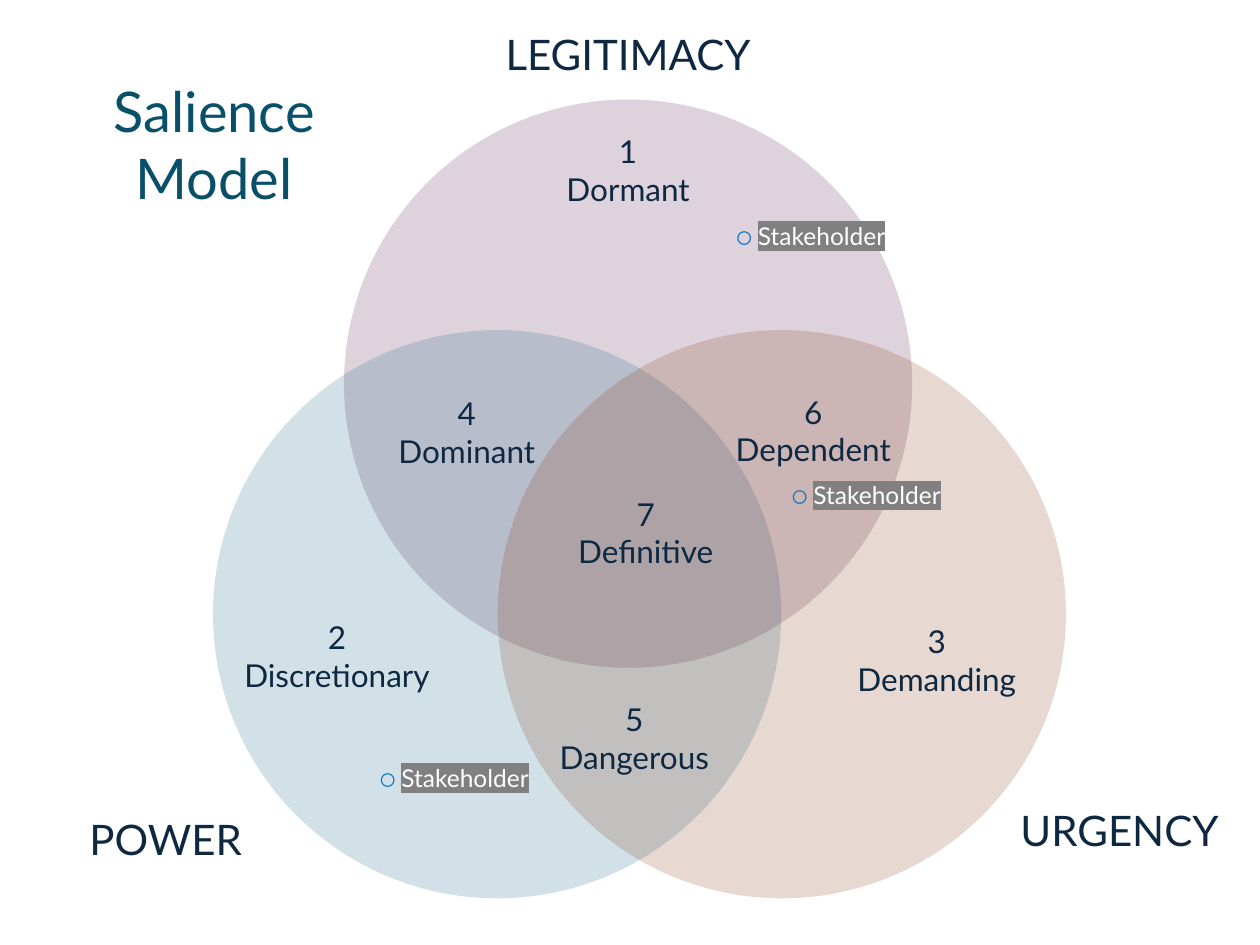
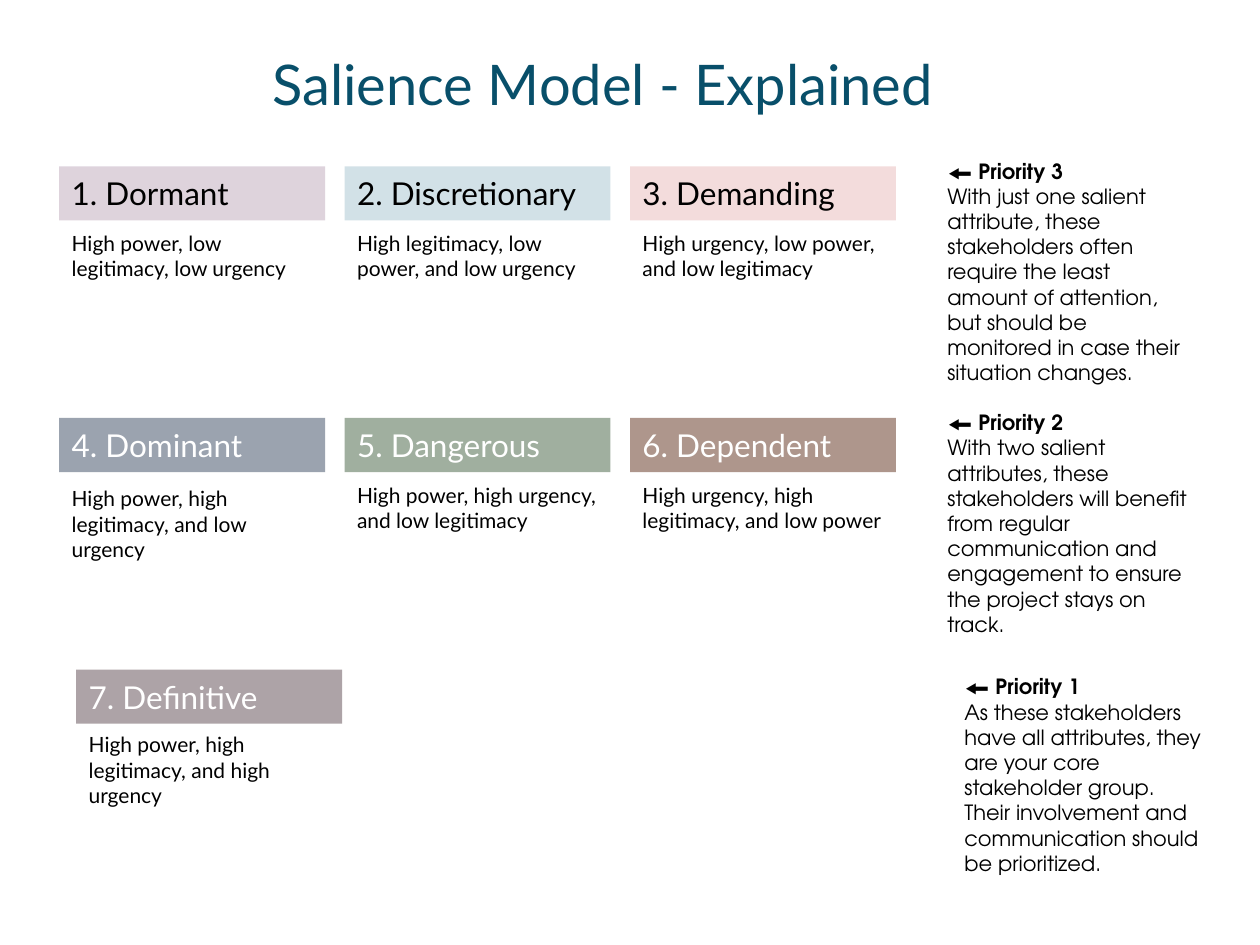
from lxml import etree
from pptx import Presentation
from pptx.dml.color import RGBColor
from pptx.enum.shapes import MSO_SHAPE as Shape
from pptx.enum.text import MSO_ANCHOR as Anchor, MSO_AUTO_SIZE as AutoSize, PP_ALIGN as Align
from pptx.oxml.ns import qn
from pptx.util import Inches, Pt

# Colours
WHITE = RGBColor(0xFF, 0xFF, 0xFF)
BLACK = RGBColor(0x00, 0x00, 0x00)
NAVY = RGBColor(0x0E, 0x28, 0x41)
TEAL = RGBColor(0x08, 0x4F, 0x6A)
MARKER_BLUE = RGBColor(0x00, 0x70, 0xC0)
GREY = RGBColor(0x80, 0x80, 0x80)
PLUM = RGBColor(0x50, 0x16, 0x4A)
OCEAN = RGBColor(0x15, 0x60, 0x82)
RUST = RGBColor(0x80, 0x35, 0x0E)
RED = RGBColor(0xC1, 0x47, 0x47)
SLATE = RGBColor(0x9B, 0xA3, 0xAF)
SAGE = RGBColor(0xA0, 0xAF, 0x9F)
CLAY = RGBColor(0xAE, 0x96, 0x8C)
MAUVE = RGBColor(0xAD, 0xA3, 0xA7)

# Grid: 100 columns by 75 rows of square cells
WIDTH, HEIGHT = Inches(10), Inches(7.5)
CELL = WIDTH / 100
TINT = 19  # opacity of see-through fills, in percent

# Text styles
TITLE = dict(name="Lato", size=Pt(32), color=TEAL)
ATTRIBUTE = dict(name="Lato", size=Pt(24), color=NAVY)
REGION = dict(name="Lato", size=Pt(18), color=NAVY)
MARKER = dict(name="Lato", size=Pt(14), color=MARKER_BLUE)
STAKEHOLDER = {**MARKER, "color": WHITE, "highlight": GREY}
HEADING = dict(name="Lato", size=Pt(18), color=BLACK)
DETAIL = dict(name="Lato", size=Pt(12), color=BLACK)
ADVICE = dict(name="TeX Gyre Adventor", size=Pt(12), color=BLACK, bold=False)
PRIORITY = {**ADVICE, "bold": True}


class Painter:
    """Holds the deck and the current slide; places elements in grid cells."""

    def __init__(self):
        self.deck = Presentation()
        self.deck.slide_width, self.deck.slide_height = WIDTH, HEIGHT
        self.page = None

    def new_page(self, title, *cells):
        self.page = self.deck.slides.add_slide(self.deck.slide_layouts[5])
        box = self.page.shapes.title
        for side, value in zip(("left", "top", "width", "height"), self.place(*cells)):
            setattr(box, side, value)
        self.set_lines(box, [[(title, TITLE)]], Align.CENTER)

    def place(self, *cells):
        return [round(cell * CELL) for cell in cells]

    def set_lines(self, box, lines, align=Align.LEFT):
        """Each line is a list of (text, style) pairs."""
        frame = box.text_frame
        settings = dict(word_wrap=True, auto_size=AutoSize.NONE, vertical_anchor=Anchor.MIDDLE)
        for key, value in settings.items():
            setattr(frame, key, value)
        for index, line in enumerate(lines):
            para = frame.add_paragraph() if index else frame.paragraphs[0]
            para.alignment = align
            for text, style in line:
                span = para.add_run()
                span.text = text
                self.style_font(span.font, style)

    def style_font(self, font, style):
        for key, value in style.items():
            if key == "color":
                font.color.rgb = value
            elif key != "highlight":
                setattr(font, key, value)
        if "highlight" in style:
            mark = etree.Element(qn("a:highlight"))
            etree.SubElement(mark, qn("a:srgbClr"), val=str(style["highlight"]))
            font._element.find(qn("a:solidFill")).addnext(mark)

    def text(self, cells, lines, align=Align.LEFT):
        self.set_lines(self.page.shapes.add_textbox(*self.place(*cells)), lines, align)

    def shape(self, kind, cells, color, opacity=100):
        box = self.page.shapes.add_shape(kind, *self.place(*cells))
        box.shadow.inherit = False
        box.line.fill.background()
        box.fill.solid()
        box.fill.fore_color.rgb = color
        if opacity < 100:
            tone = box._element.spPr.find(".//" + qn("a:srgbClr"))
            etree.SubElement(tone, qn("a:alpha"), val=str(opacity * 1000))
        return box


def venn_page(painter):
    painter.new_page("Salience Model", 1.4, 4.8, 31.2, 13.2)

    # Three overlapping circles
    diameter = 45.1
    for left, top, color in [(27.3, 7.9, PLUM), (16.9, 26.2, OCEAN), (39.5, 26.2, RUST)]:
        painter.shape(Shape.OVAL, (left, top, diameter, diameter), color, TINT)

    # Numbered regions and the attribute of each circle
    label_size = (21.7, 9.5)
    regions = [
        ("Dormant", 39, 8.7), ("Discretionary", 15.9, 47.3), ("Demanding", 63.5, 47.6),
        ("Dominant", 26.2, 29.5), ("Dangerous", 39.5, 53.8), ("Dependent", 53.7, 29.4),
        ("Definitive", 40.4, 37.5),
    ]
    for number, (name, left, top) in enumerate(regions, 1):
        lines = [[(str(number), REGION)], [(name, REGION)]]
        painter.text((left, top, *label_size), lines, Align.CENTER)
    for name, left, top in [("POWER", 2.3, 61.8), ("LEGITIMACY", 39, -0.5), ("URGENCY", 78, 61.1)]:
        painter.text((left, top, *label_size), [[(name, ATTRIBUTE)]], Align.CENTER)

    # Stakeholder markers
    for left, top in [(57.5, 15.9), (61.9, 36.5), (29.2, 58.9)]:
        painter.text((left, top, 20.8, 5.6), [[("⚪ ", MARKER), ("Stakeholder", STAKEHOLDER)]])


def explained_page(painter):
    painter.new_page("Salience Model - Explained", 9.4, 0, 76.9, 13.2)
    first_left, first_top, column_step, row_step = 4.7, 13.2, 22.65, 19.97
    width, band_height, advice_left = 21.1, 4.3, 74.2

    # Each row: indent, heading colour, opacity, advice, classes (name, fill, detail, height)
    rows = [
        (0, BLACK, TINT,
         "With just one salient attribute, these stakeholders often require the least amount of "
         "attention, but should be monitored in case their situation changes.",
         [("Dormant", PLUM, "High power, low legitimacy, low urgency", 5.6),
          ("Discretionary", OCEAN, "High legitimacy, low power, and low urgency", 5.6),
          ("Demanding", RED, "High urgency, low power, and low legitimacy", 5.6)]),
        (0, WHITE, 100,
         "With two salient attributes, these stakeholders will benefit from regular "
         "communication and engagement to ensure the project stays on track.",
         [("Dominant", SLATE, "High power, high legitimacy, and low urgency", 8.2),
          ("Dangerous", SAGE, "High power, high urgency, and low legitimacy", 5.6),
          ("Dependent", CLAY, "High urgency, high legitimacy, and low power", 5.6)]),
        (1.35, WHITE, 100,
         "As these stakeholders have all attributes, they are your core stakeholder group. "
         "Their involvement and communication should be prioritized.",
         [("Definitive", MAUVE, "High power, high legitimacy, and high urgency", 7.3)]),
    ]
    number = 0
    for row, (indent, ink, opacity, advice, classes) in enumerate(rows):
        top = first_top + row * row_step
        for column, (name, color, detail, height) in enumerate(classes):
            number += 1
            left = first_left + indent + column * column_step
            band = painter.shape(Shape.RECTANGLE, (left, top, width, band_height), color, opacity)
            painter.set_lines(band, [[(f"{number}. {name}", {**HEADING, "color": ink})]])
            painter.text((left, top + band_height, width, height), [[(detail, DETAIL)]])
        painter.text((advice_left + indent, top - 0.5, width, 17.7),
                     [[(f"⬅ Priority {len(rows) - row}", PRIORITY)], [(advice, ADVICE)]])


def main():
    painter = Painter()
    venn_page(painter)
    explained_page(painter)
    painter.deck.save("out.pptx")


if __name__ == "__main__":
    main()
